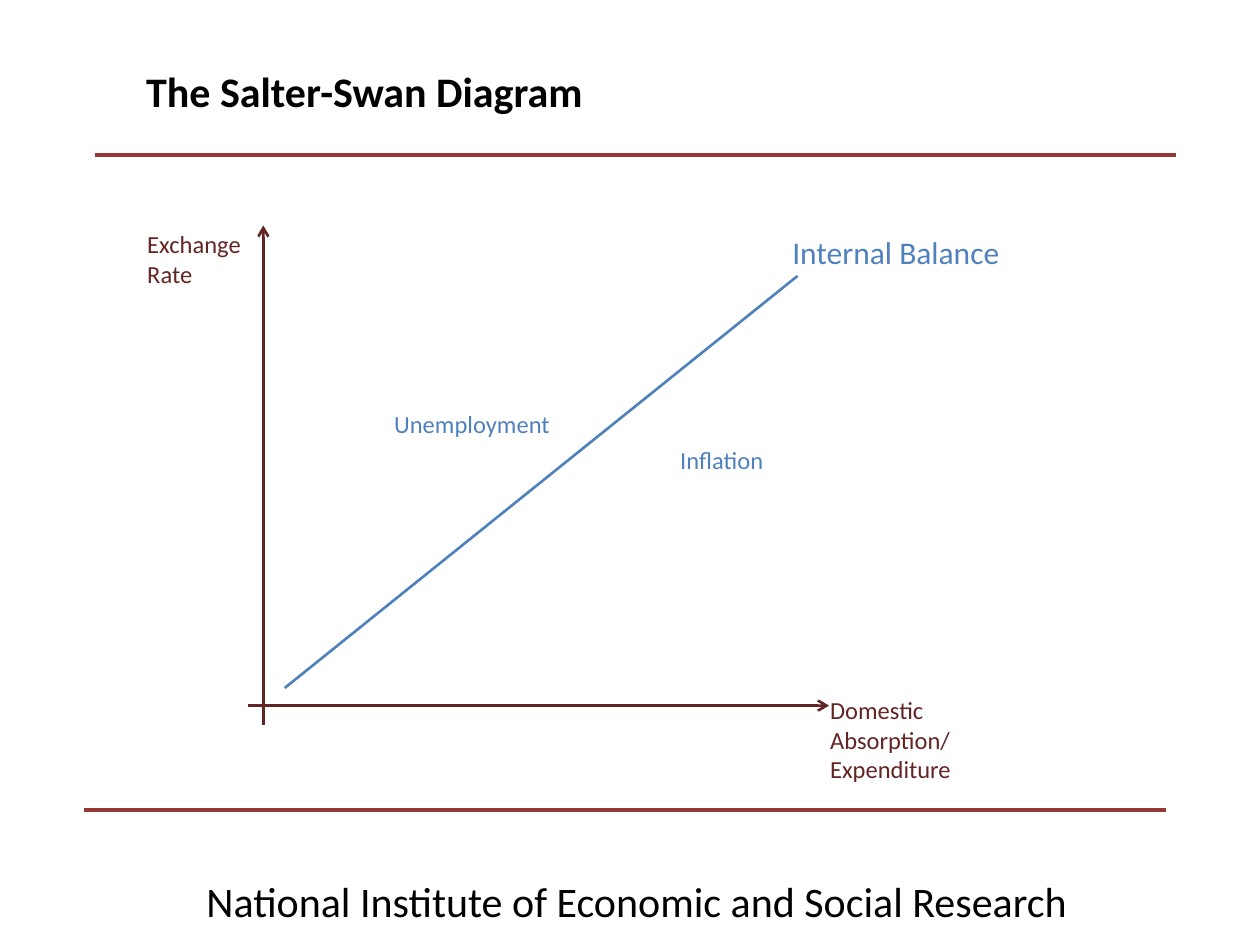
"""Build the Salter-Swan diagram slide."""
from pptx import Presentation
from pptx.dml.color import RGBColor
from pptx.enum.shapes import MSO_CONNECTOR
from pptx.enum.text import MSO_ANCHOR, MSO_AUTO_SIZE, PP_ALIGN
from pptx.oxml.ns import qn
from pptx.util import Inches, Pt
from lxml.etree import SubElement

COLORS = {"rule": "953735", "axis": "632523", "curve": "4F81BD", "text": "000000"}


def rgb(name):
    return RGBColor.from_string(COLORS[name])


def write_text(sp, box, lines, color, size, bold=False):
    sp.left, sp.top, sp.width, sp.height = map(Inches, box)
    tf = sp.text_frame
    frame = {"word_wrap": True, "auto_size": MSO_AUTO_SIZE.NONE,
             "vertical_anchor": MSO_ANCHOR.TOP}
    for key, value in frame.items():
        setattr(tf, key, value)
    tf.text = "\n".join(lines)
    fmt = {"name": "Calibri", "size": Pt(size), "bold": bold}
    for p in tf.paragraphs:
        p.alignment = PP_ALIGN.LEFT
        for r in p.runs:
            for key, value in fmt.items():
                setattr(r.font, key, value)
            r.font.color.rgb = rgb(color)


def add_label(s, box, lines, color, size=14):
    write_text(s.shapes.add_textbox(0, 0, 0, 0), box, lines, color, size)


def add_line(s, start, end, color, width=1.5, arrow=False):
    points = map(Inches, start + end)
    line = s.shapes.add_connector(MSO_CONNECTOR.STRAIGHT, *points)
    line.line.color.rgb = rgb(color)
    line.line.width = Pt(width)
    sp_pr = line.element.spPr
    if arrow:
        SubElement(sp_pr.find(qn("a:ln")), qn("a:tailEnd"), type="arrow")
    SubElement(sp_pr, qn("a:effectLst"))


def main():
    prs = Presentation()
    prs.slide_width, prs.slide_height = Inches(10), Inches(7.5)
    s = prs.slides.add_slide(prs.slide_layouts[5])

    write_text(s.shapes.title, (1.06, 0.47, 8.03, 0.5),
               ["The Salter-Swan Diagram"], "text", 24, bold=True)
    for left, top in ((0.75, 1.23), (0.67, 6.43)):
        add_line(s, (left, top), (left + 8.58, top), "rule", 2.25)
    add_label(s, (1.54, 6.9, 7.95, 0.4),
              ["National Institute of Economic and Social Research"], "text", 24)

    add_line(s, (2.09, 5.75), (2.09, 1.79), "axis", arrow=True)
    add_line(s, (1.97, 5.6), (6.58, 5.6), "axis", arrow=True)
    add_line(s, (6.33, 2.19), (2.26, 5.46), "curve")

    add_label(s, (6.19, 1.8, 3.6, 0.4), ["Internal Balance"], "curve", 18)
    add_label(s, (1.07, 1.77, 0.99, 0.57), ["Exchange", "Rate"], "axis")
    add_label(s, (6.49, 5.47, 1.5, 0.81),
              ["Domestic Absorption/", "Expenditure"], "axis")
    add_label(s, (5.3, 3.48, 1.15, 0.34), ["Inflation"], "curve")
    add_label(s, (3.03, 3.2, 1.56, 0.34), ["Unemployment"], "curve")

    prs.save("out.pptx")


if __name__ == "__main__":
    main()
